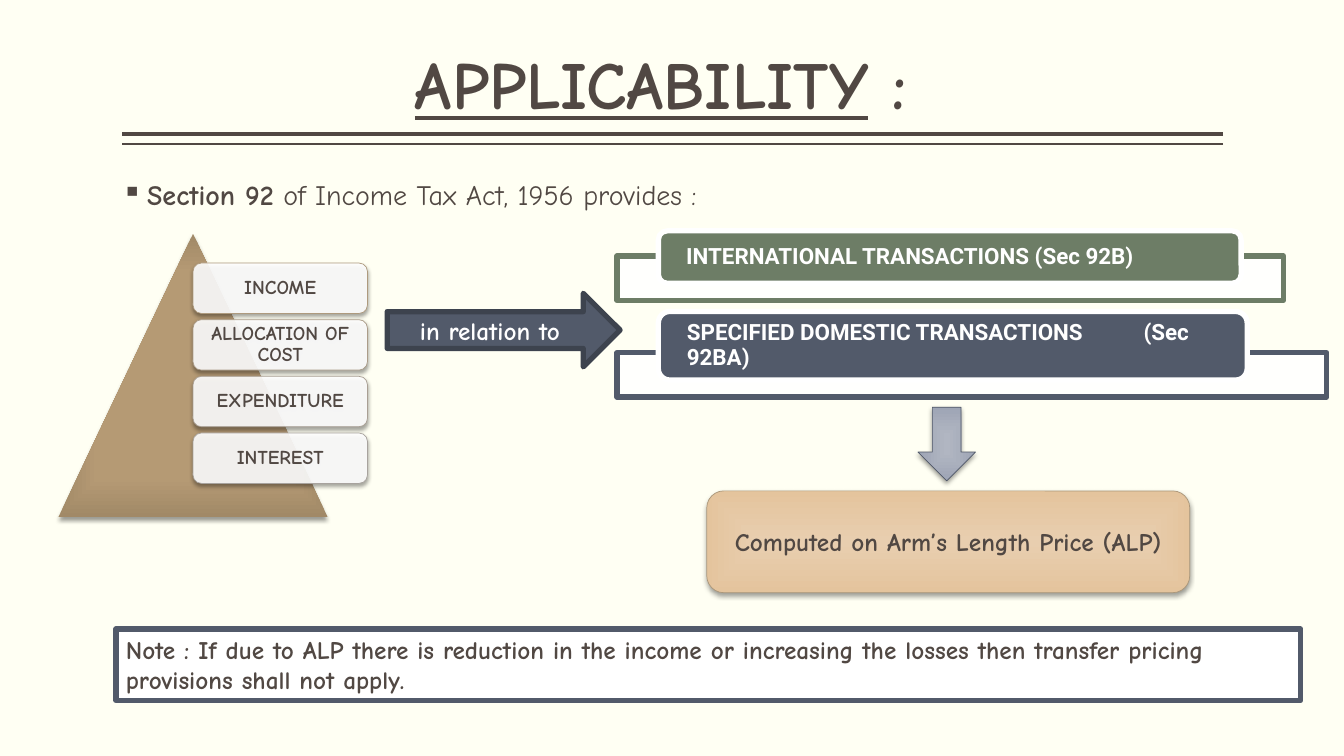
import pptx
import pptx.util
import pptx.dml.color
import pptx.enum.shapes
import pptx.enum.text
import pptx.oxml
import pptx.oxml.ns
from lxml import etree

Inches = pptx.util.Inches
Pt = pptx.util.Pt
SHAPE = pptx.enum.shapes.MSO_SHAPE
ALIGN = pptx.enum.text.PP_ALIGN
ANCHOR = pptx.enum.text.MSO_ANCHOR
INK, PAPER, WHITE = "514843", "FFFFF3", "FFFFFF"
SLATE, GREEN = "525A6A", "6D7D66"
HAND, SANS = "Comic Neue", "Roboto"


def color(value):
    """Turn a hex string into a colour."""
    return pptx.dml.color.RGBColor.from_string(value)


def assign(target, values):
    """Set each attribute of target from a dict."""
    for name, value in values.items():
        setattr(target, name, value)


def child(parent, tag, **attributes):
    """Append a DrawingML element to parent."""
    values = {name: str(value) for name, value in attributes.items()}
    return etree.SubElement(parent, pptx.oxml.ns.qn("a:" + tag), values)


def write(frame, runs, size, ink=INK, font=HAND, align=ALIGN.LEFT, spacing=None,
          insets=(0.1, 0.05), anchor=ANCHOR.MIDDLE):
    """Write (text, font values) runs as one paragraph and return it."""
    across, down = map(Inches, insets)
    assign(frame, {"word_wrap": True, "vertical_anchor": anchor,
                   "auto_size": pptx.enum.text.MSO_AUTO_SIZE.NONE,
                   "margin_left": across, "margin_right": across,
                   "margin_top": down, "margin_bottom": down})
    paragraph = frame.paragraphs[0]
    assign(paragraph, {"alignment": align, "line_spacing": spacing})
    for text, values in runs:
        run = paragraph.add_run()
        run.text = text
        assign(run.font, {"name": font, "size": Pt(size), "bold": True} | values)
        run.font.color.rgb = color(ink)
    return paragraph


def add_block(slide, kind, box, fill, line=None, width=0.5, opacity=100):
    """Add a flat preset shape with a solid fill."""
    block = slide.shapes.add_shape(kind, *map(Inches, box))
    block.shadow.inherit = False
    block.fill.solid()
    block.fill.fore_color.rgb = color(fill)
    if opacity < 100:
        tint = block._element.spPr.find(".//" + pptx.oxml.ns.qn("a:srgbClr"))
        child(tint, "alpha", val=opacity * 1000)
    if line:
        block.line.color.rgb = color(line)
        block.line.width = Pt(width)
    else:
        block.line.fill.background()
    return block


def add_shadow(block, blur):
    """Give a block a soft shadow straight below it."""
    effects = block._element.spPr.find(pptx.oxml.ns.qn("a:effectLst"))
    shadow = child(effects, "outerShdw", blurRad=Pt(blur), dist=Pt(2),
                   dir=90 * 60000, rotWithShape=0)
    child(child(shadow, "srgbClr", val="000000"), "alpha", val=38000)


def add_glow_fill(block, stops):
    """Replace the solid fill with a gradient spreading from the centre."""
    solid = block._element.spPr.find(pptx.oxml.ns.qn("a:solidFill"))
    gradient = pptx.oxml.parse_xml(
        "<a:gradFill %s rotWithShape='1'/>" % pptx.oxml.ns.nsdecls("a"))
    stop_list = child(gradient, "gsLst")
    for position, tint in stops:
        child(child(stop_list, "gs", pos=position * 1000), "srgbClr", val=tint)
    middle = dict.fromkeys("ltrb", 50000)
    child(child(gradient, "path", path="rect"), "fillToRect", **middle)
    solid.getparent().replace(solid, gradient)


def add_heading(slide, box):
    """Fill the title and draw the double rule under it."""
    left, top, width, height = box
    title = slide.shapes.title
    assign(title, dict(zip(("left", "top", "width", "height"), map(Inches, box))))
    write(title.text_frame, [("APPLICABILITY", {"underline": True}), (" : ", {})], 48,
          align=ALIGN.CENTER, spacing=0.9, insets=(0, 0.05), anchor=ANCHOR.BOTTOM)
    for drop, weight in ((0.05, 3), (0.15, 1)):
        level = Inches(top + height + drop)
        rule = slide.shapes.add_connector(
            pptx.enum.shapes.MSO_CONNECTOR.STRAIGHT,
            Inches(left + width), level, Inches(left), level)
        rule.line.color.rgb = color(INK)
        rule.line.width = Pt(weight)
        child(rule._element.spPr, "effectLst")


def add_provision(slide, box):
    """Add the bulleted sentence that names the section."""
    provision = slide.shapes.add_textbox(*map(Inches, box))
    paragraph = write(
        provision.text_frame,
        [("Section 92", {}), (" of Income Tax Act, 1956 provides :", {"bold": False})],
        20, spacing=0.9, insets=(0, 0.05), anchor=ANCHOR.TOP)
    properties = paragraph._p.get_or_add_pPr()
    properties.set("marL", str(Inches(0.25)))
    properties.set("indent", str(Inches(-0.25)))
    child(properties, "buChar", char="▪")


def add_pyramid(slide, box, cards):
    """Draw the triangle with a column of cards starting at its axis."""
    left, top, width, height = box
    pyramid = add_block(slide, SHAPE.ISOSCELES_TRIANGLE, box, "B79B75")
    add_glow_fill(pyramid, [(0, "B79B75"), (71, "B59A74"), (100, "A18967")])
    add_shadow(pyramid, 3.1)
    for row, (label, outline) in enumerate(cards):
        place = (left + width / 2, top + 0.29 + row * height / 5, 1.73, 0.5)
        card = add_block(slide, SHAPE.ROUNDED_RECTANGLE, place, WHITE, outline, opacity=90)
        add_shadow(card, 3.1)
        write(card.text_frame, [(label, {})], 14, align=ALIGN.CENTER,
              spacing=0.9, insets=(0.08, 0.08))


def add_banner(slide, box, label, label_size, tint, tab=None):
    """Draw an open frame with a filled label across its upper edge."""
    left, top, width, height = box
    label_width, label_height = label_size
    add_block(slide, SHAPE.RECTANGLE, box, WHITE, tint, 3.78, 90)
    place = (left + 0.41, top + 0.27 - label_height, label_width, label_height)
    plate = add_block(slide, SHAPE.ROUNDED_RECTANGLE, place, tint, WHITE, 3.78)
    paragraph = write(plate.text_frame, [(label, {})], 16, WHITE, SANS,
                      spacing=0.9, insets=(0.25, 0))
    if tab:
        tabs = child(paragraph._p.get_or_add_pPr(), "tabLst")
        child(tabs, "tab", pos=Inches(tab), algn="l")


def add_relation(slide, box):
    """Draw the arrow from the pyramid to the banners."""
    relation = add_block(slide, SHAPE.RIGHT_ARROW, box, SLATE, "3D434E", 3.78)
    write(relation.text_frame, [("in relation to ", {})], 18, WHITE, align=ALIGN.CENTER)


def add_pricing(slide, box):
    """Draw the pricing box and the arrow that leads down to it."""
    left, top, width, height = box
    place = (left + width / 2 - 0.3, top - 0.83, 0.57, 0.73)
    arrow = add_block(slide, SHAPE.DOWN_ARROW, place, "B1B6C2", "505868")
    add_glow_fill(arrow, [(0, "B1B6C2"), (100, "9EA5B5")])
    pricing = add_block(slide, SHAPE.ROUNDED_RECTANGLE, box, "E8CEAF", "AB977A")
    add_glow_fill(pricing, [(0, "E8CEAF"), (100, "E4C49D")])
    for block in (arrow, pricing):
        add_shadow(block, 3.5)
    write(pricing.text_frame, [("Computed on Arm’s Length Price (ALP)", {})], 18,
          align=ALIGN.CENTER)


def add_note(slide, box):
    """Add the framed note at the foot."""
    note = add_block(slide, SHAPE.RECTANGLE, box, WHITE, SLATE, 3.78)
    text = ("Note : If due to ALP there is reduction in the income or increasing "
            "the losses then transfer pricing provisions shall not apply.")
    write(note.text_frame, [(text, {})], 18, anchor=ANCHOR.TOP)


def main():
    """Build the slide and save it."""
    deck = pptx.Presentation()
    assign(deck, {"slide_width": Inches(13.33), "slide_height": Inches(7.5)})
    slide = deck.slides.add_slide(deck.slide_layouts[5])
    slide.background.fill.solid()
    slide.background.fill.fore_color.rgb = color(PAPER)
    add_heading(slide, (1.21, 0.08, 10.92, 1.2))
    add_provision(slide, (1.21, 1.75, 10.92, 5))
    add_pyramid(slide, (0.58, 2.32, 2.67, 2.81), [
        ("INCOME", "AE9A7E"), ("ALLOCATION OF COST", "AB9C89"),
        ("EXPENDITURE", "A99F94"), ("INTEREST", "A8A39E")])
    add_banner(slide, (6.12, 2.54, 6.61, 0.44),
               "INTERNATIONAL TRANSACTIONS (Sec 92B)", (5.78, 0.52), GREEN)
    add_banner(slide, (6.12, 3.5, 7.04, 0.44),
               "SPECIFIED DOMESTIC TRANSACTIONS\t(Sec 92BA)", (5.84, 0.68), SLATE, 4.53)
    add_relation(slide, (3.84, 2.91, 2.31, 0.73))
    add_pricing(slide, (7.01, 4.87, 4.79, 1.01))
    add_note(slide, (1.15, 6.24, 11.75, 0.71))
    deck.save("out.pptx")


if __name__ == "__main__":
    main()
